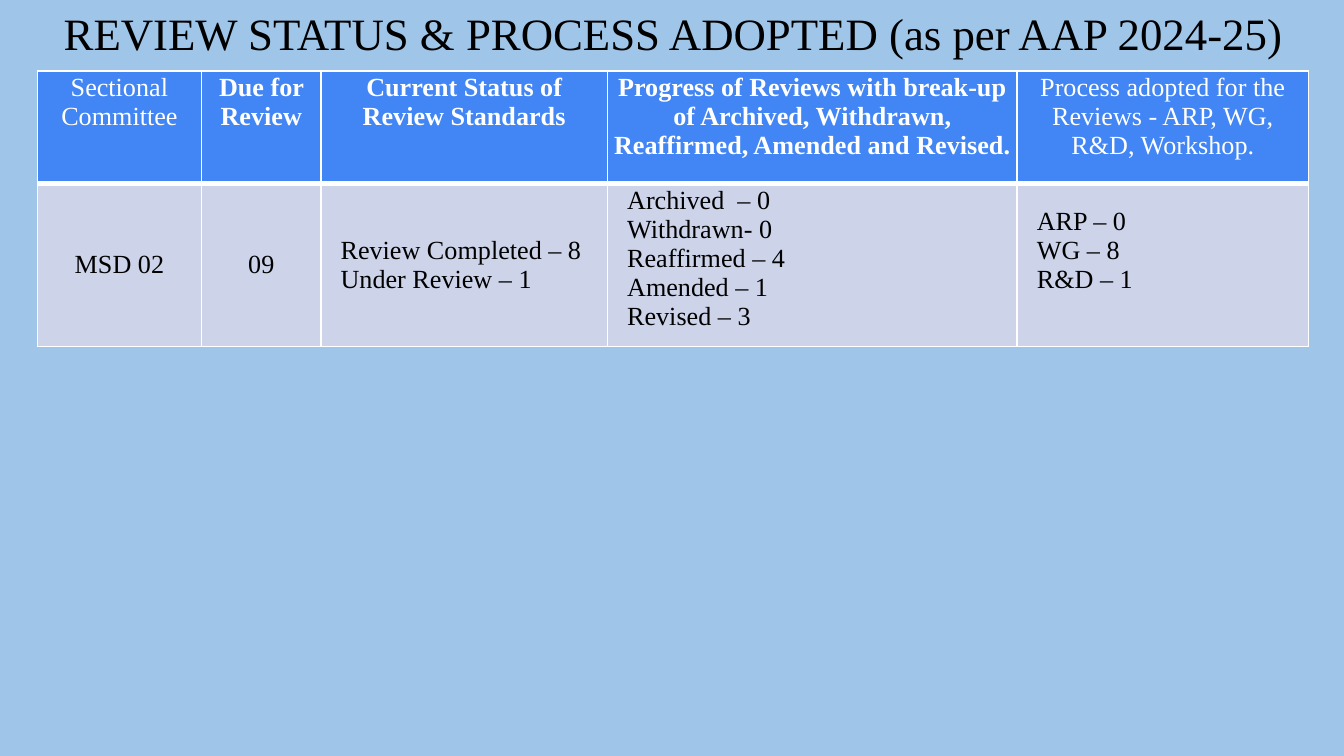
from pptx import Presentation
from pptx.dml.color import RGBColor
from pptx.enum.text import MSO_ANCHOR, PP_ALIGN
from pptx.oxml.xmlchemy import OxmlElement
from pptx.util import Pt

FONT = "Times New Roman"
SKY = RGBColor(0x9F, 0xC5, 0xE8)
BLUE = RGBColor(0x42, 0x85, 0xF4)
LAVENDER = RGBColor(0xCD, 0xD4, 0xEA)
WHITE = RGBColor(0xFF, 0xFF, 0xFF)
BLACK = RGBColor(0, 0, 0)

LEFT, TABLE_TOP, WIDTH = 20, 38, 681
COLUMN_WIDTHS = [88, 64, 153.5, 219.5, 156]
ROW_HEIGHTS = [60.5, 80]
CELL_MARGIN = 1.5
LIST_INDENT = 9
# Keeps the process list one half line above the middle of its cell
PROCESS_BOTTOM_MARGIN = 17

# (text, bold)
HEADERS = [
    ("Sectional Committee", False),
    ("Due for Review", True),
    ("Current Status of Review Standards", True),
    ("Progress of Reviews with break-up of Archived, Withdrawn, "
     "Reaffirmed, Amended and Revised.", True),
    ("Process adopted for the Reviews - ARP, WG, R&D, Workshop.", False),
]
# (lines, alignment, anchor, bottom margin)
REVIEW_ROW = [
    (["MSD 02"], PP_ALIGN.CENTER, MSO_ANCHOR.MIDDLE, CELL_MARGIN),
    (["09"], PP_ALIGN.CENTER, MSO_ANCHOR.MIDDLE, CELL_MARGIN),
    (["Review Completed – 8", "Under Review – 1"],
     PP_ALIGN.LEFT, MSO_ANCHOR.MIDDLE, CELL_MARGIN),
    (["Archived  – 0", "Withdrawn- 0", "Reaffirmed – 4", "Amended – 1",
      "Revised – 3"], PP_ALIGN.LEFT, MSO_ANCHOR.TOP, CELL_MARGIN),
    (["ARP – 0", "WG – 8", "R&D – 1"],
     PP_ALIGN.LEFT, MSO_ANCHOR.MIDDLE, PROCESS_BOTTOM_MARGIN),
]


def write_lines(tf, lines, size, color, align, bold=False):
    for i, line in enumerate(lines):
        p = tf.paragraphs[0] if i == 0 else tf.add_paragraph()
        p.text = line
        p.alignment = align
        p.font.name = FONT
        p.font.size = Pt(size)
        p.font.bold = bold
        p.font.color.rgb = color
        if align == PP_ALIGN.LEFT:
            pPr = p._p.get_or_add_pPr()
            pPr.set("marL", str(Pt(LIST_INDENT)))
            pPr.set("indent", "0")


def set_borders(cell, top, bottom):
    """Draw white cell borders; the sides are one point wide."""
    tcPr = cell._tc.get_or_add_tcPr()
    widths = {"a:lnL": 1, "a:lnR": 1, "a:lnT": top, "a:lnB": bottom}
    for i, (tag, width) in enumerate(widths.items()):
        ln = OxmlElement(tag)
        ln.set("w", str(Pt(width)))
        fill = OxmlElement("a:solidFill")
        color = OxmlElement("a:srgbClr")
        color.set("val", str(WHITE))
        fill.append(color)
        ln.append(fill)
        tcPr.insert(i, ln)


def style_cell(cell, color, anchor, bottom_margin=CELL_MARGIN):
    cell.margin_left = cell.margin_right = cell.margin_top = Pt(CELL_MARGIN)
    cell.margin_bottom = Pt(bottom_margin)
    cell.vertical_anchor = anchor
    cell.fill.solid()
    cell.fill.fore_color.rgb = color


def add_title(s, text):
    sp = s.shapes.add_textbox(Pt(LEFT), Pt(0), Pt(WIDTH), Pt(TABLE_TOP))
    tf = sp.text_frame
    tf.word_wrap = True
    tf.margin_left = tf.margin_right = Pt(5)
    tf.margin_top = tf.margin_bottom = Pt(3)
    tf.vertical_anchor = MSO_ANCHOR.MIDDLE
    write_lines(tf, [text], 24, BLACK, PP_ALIGN.CENTER)
    tf.paragraphs[0].line_spacing = 0.9


def add_review_table(s):
    table = s.shapes.add_table(
        len(ROW_HEIGHTS), len(COLUMN_WIDTHS), Pt(LEFT), Pt(TABLE_TOP),
        Pt(sum(COLUMN_WIDTHS)), Pt(sum(ROW_HEIGHTS))).table
    for column, width in zip(table.columns, COLUMN_WIDTHS):
        column.width = Pt(width)
    for row, height in zip(table.rows, ROW_HEIGHTS):
        row.height = Pt(height)

    for col, (text, bold) in enumerate(HEADERS):
        cell = table.cell(0, col)
        style_cell(cell, BLUE, MSO_ANCHOR.TOP)
        set_borders(cell, top=1, bottom=3)
        write_lines(cell.text_frame, [text], 14, WHITE, PP_ALIGN.CENTER, bold)

    for col, (lines, align, anchor, bottom_margin) in enumerate(REVIEW_ROW):
        cell = table.cell(1, col)
        style_cell(cell, LAVENDER, anchor, bottom_margin)
        set_borders(cell, top=3, bottom=1)
        write_lines(cell.text_frame, lines, 14, BLACK, align)


def main():
    prs = Presentation()
    prs.slide_width, prs.slide_height = Pt(720), Pt(405)
    s = prs.slides.add_slide(prs.slide_layouts[6])
    s.background.fill.solid()
    s.background.fill.fore_color.rgb = SKY
    add_title(s, "REVIEW STATUS & PROCESS ADOPTED (as per AAP 2024-25)")
    add_review_table(s)
    prs.save("out.pptx")


if __name__ == "__main__":
    main()
